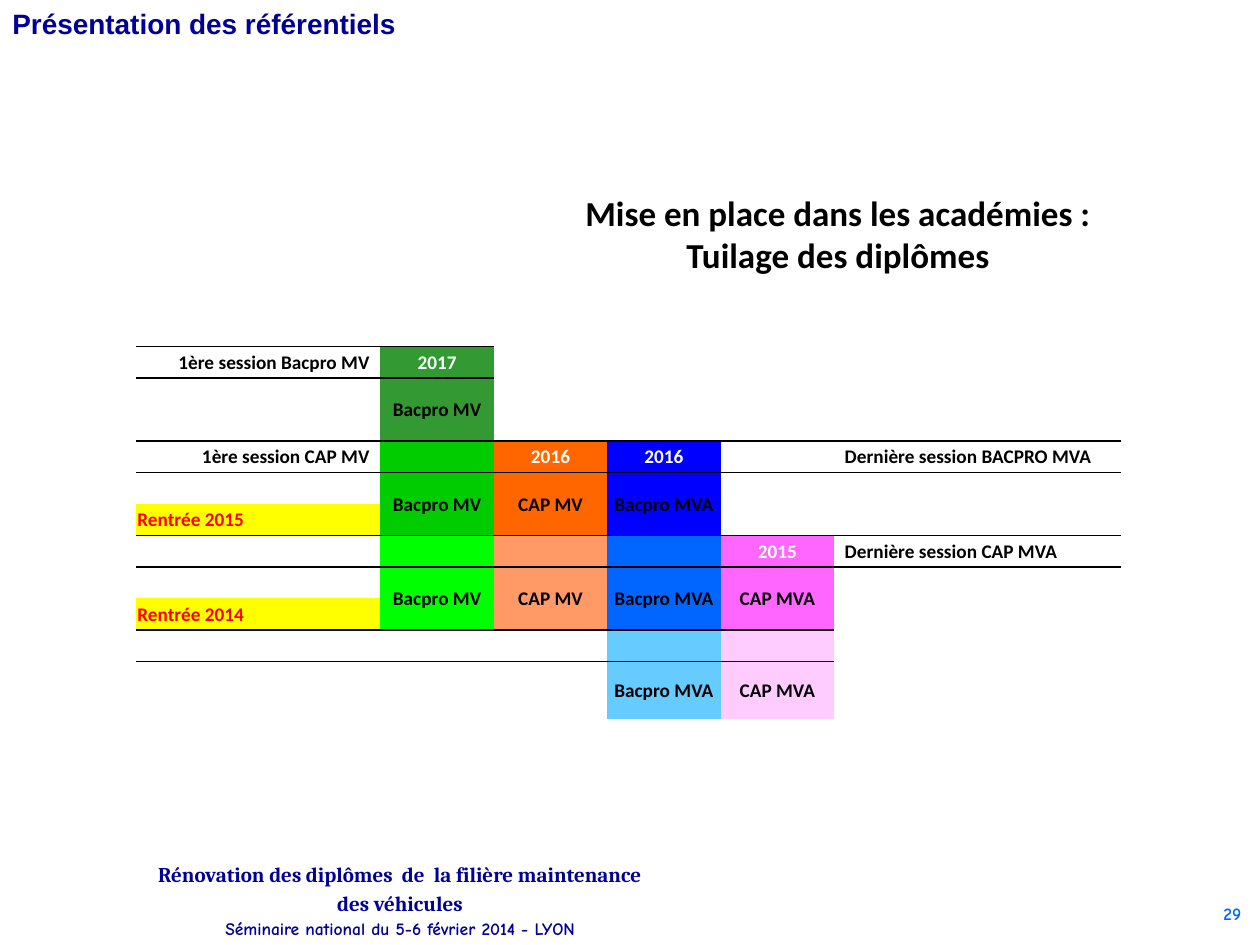
from collections import namedtuple
from dataclasses import dataclass

from lxml import etree
from pptx import Presentation
from pptx import util as u
from pptx.dml.color import RGBColor
from pptx.enum import text
from pptx.oxml import ns

Box = namedtuple("Box", "column row columns rows")
Stack = namedtuple("Stack", "column row diploma colour year")
ALIGN, ANCHOR = text.PP_ALIGN, text.MSO_ANCHOR
SLIDE_WIDTH, SLIDE_HEIGHT = u.Inches(10), u.Inches(7.5)
GRID_COLUMNS, GRID_ROWS = 100, 75
NO_STYLE = "{2D5ABB26-0587-4C30-8999-92F81FD0307C}"


@dataclass(frozen=True)
class Theme:
    """Hold the colours, fonts and type sizes of the slide."""
    navy: str = "000099"
    blue: str = "0066FF"
    black: str = "000000"
    white: str = "FFFFFF"
    red: str = "FF0000"
    yellow: str = "FFFF00"
    heading_font: str = "Arial"
    body_font: str = "Calibri"
    footer_font: str = "Cambria"
    note_font: str = "Comic Neue"
    heading: int = 16
    title: int = 20
    footer: int = 12
    note: int = 10
    cell: int = 11
    rule: int = 1


THEME = Theme()
COLUMN_WIDTHS = [19.4, 9, 9, 9, 9, 22.8]
ROW_HEIGHTS = [2.2] + [2.5] * 11 + [2.1] * 2
RULES = {1: 2, 4: 6, 7: 6, 10: 5}
STACKS = [
    Stack(1, 1, "Bacpro MV", "339933", "2017"),
    Stack(1, 4, "Bacpro MV", "00CC00", ""),
    Stack(1, 7, "Bacpro MV", "00FF00", ""),
    Stack(2, 4, "CAP MV", "FF6600", "2016"),
    Stack(2, 7, "CAP MV", "FF9966", ""),
    Stack(3, 4, "Bacpro MVA", "0000FF", "2016"),
    Stack(3, 7, "Bacpro MVA", "0066FF", ""),
    Stack(3, 10, "Bacpro MVA", "66CCFF", ""),
    Stack(4, 7, "CAP MVA", "FF66FF", "2015"),
    Stack(4, 10, "CAP MVA", "FFCCFF", ""),
]
FIRST_SESSIONS = {1: "1ère session Bacpro MV", 4: "1ère session CAP MV"}
LAST_SESSIONS = {4: "Dernière session BACPRO MVA", 7: "Dernière session CAP MVA"}
SCHOOL_YEARS = {6: "Rentrée 2015", 9: "Rentrée 2014"}


def across(columns):
    """Turn grid columns into a length."""
    return int(SLIDE_WIDTH * columns / GRID_COLUMNS)


def down(rows):
    """Turn grid rows into a length."""
    return int(SLIDE_HEIGHT * rows / GRID_ROWS)


def place(box):
    """Turn a grid box into left, top, width and height."""
    return across(box.column), down(box.row), across(box.columns), down(box.rows)


def write(paragraph, words, size, font, colour, align=ALIGN.LEFT, bold=True, spacing=None):
    """Write words into a paragraph with the given format."""
    paragraph.alignment = align
    if spacing:
        paragraph.line_spacing = spacing
    run = paragraph.add_run()
    run.text = words
    run.font.size, run.font.name, run.font.bold = u.Pt(size), font, bold
    run.font.color.rgb = RGBColor.from_string(colour)


def add_frame(slide, box, anchor=ANCHOR.TOP):
    """Add a wrapping text box and return its text frame."""
    frame = slide.shapes.add_textbox(*place(box)).text_frame
    frame.word_wrap = True
    frame.vertical_anchor = anchor
    return frame


def add_line(slide, box, words, **style):
    """Add a text box that holds one paragraph."""
    write(add_frame(slide, box).paragraphs[0], words, **style)


def add_footer(slide, box):
    """Add the two-paragraph seminar footer."""
    frame = add_frame(slide, box, ANCHOR.MIDDLE)
    shared = dict(colour=THEME.navy, align=ALIGN.CENTER, spacing=1.15)
    write(frame.paragraphs[0],
          "Rénovation des diplômes  de  la filière maintenance des véhicules",
          size=THEME.footer, font=THEME.footer_font, **shared)
    write(frame.add_paragraph(), "Séminaire national du 5-6 février 2014 - LYON",
          size=THEME.note, font=THEME.note_font, **shared)


def paint(cell, colour):
    """Fill a cell with a solid colour."""
    cell.fill.solid()
    cell.fill.fore_color.rgb = RGBColor.from_string(colour)


def write_cell(cell, words, colour=THEME.black, align=ALIGN.CENTER):
    """Write words into a table cell."""
    paragraph = cell.text_frame.paragraphs[0]
    write(paragraph, words, THEME.cell, THEME.body_font, colour, align)


def clear_cell(cell):
    """Give a cell tight margins, no fill and a small empty line."""
    cell.margin_left = cell.margin_right = cell.margin_top = u.Inches(0.01)
    cell.margin_bottom = 0
    cell.vertical_anchor = ANCHOR.MIDDLE
    cell.fill.background()
    paragraph = cell.text_frame.paragraphs[0]._p
    etree.SubElement(paragraph, ns.qn("a:endParaRPr"), sz=str(THEME.cell * 100))


def add_border(cell, side):
    """Draw a rule on one side of a cell."""
    line = etree.Element(ns.qn(f"a:ln{side}"), w=str(u.Pt(THEME.rule)))
    fill = etree.SubElement(line, ns.qn("a:solidFill"))
    etree.SubElement(fill, ns.qn("a:srgbClr"), val=THEME.black)
    cell._tc.get_or_add_tcPr().insert(0, line)


def add_rules(table):
    """Draw the horizontal rules between the session bands."""
    for row, count in RULES.items():
        for column in range(count):
            above = table.cell(row - 1, column)
            add_border(table.cell(row, column), "T")
            add_border(above, "B")
            if above.is_spanned:
                add_border(table.cell(row - 2, column), "B")


def add_stack(table, stack):
    """Colour one three-row block and write its year and diploma."""
    year, diploma, last = (table.cell(stack.row + step, stack.column) for step in range(3))
    diploma.merge(last)
    for cell in (year, diploma, last):
        paint(cell, stack.colour)
    if stack.year:
        write_cell(year, stack.year, THEME.white)
    write_cell(diploma, stack.diploma)


def add_schedule(slide, box):
    """Add the table of overlapping diplomas."""
    frame = slide.shapes.add_table(len(ROW_HEIGHTS), len(COLUMN_WIDTHS), *place(box))
    table = frame.table
    table.first_row = table.horz_banding = False
    table._tbl.tblPr.find(ns.qn("a:tableStyleId")).text = NO_STYLE
    for column, width in zip(table.columns, COLUMN_WIDTHS):
        column.width = across(width)
    for row, height in zip(table.rows, ROW_HEIGHTS):
        row.height = down(height)
    for cell in table.iter_cells():
        clear_cell(cell)
    for stack in STACKS:
        add_stack(table, stack)
    for row, words in FIRST_SESSIONS.items():
        cell = table.cell(row, 0)
        cell.margin_right = across(0.85)
        write_cell(cell, words, align=ALIGN.RIGHT)
    for row, words in LAST_SESSIONS.items():
        cell = table.cell(row, 5)
        cell.margin_left = across(0.85)
        write_cell(cell, words, align=ALIGN.LEFT)
    for row, words in SCHOOL_YEARS.items():
        cell = table.cell(row, 0)
        paint(cell, THEME.yellow)
        write_cell(cell, words, THEME.red, ALIGN.LEFT)
    add_rules(table)


def main():
    """Build the slide and save it."""
    presentation = Presentation()
    presentation.slide_width, presentation.slide_height = SLIDE_WIDTH, SLIDE_HEIGHT
    slide = presentation.slides.add_slide(presentation.slide_layouts[6])
    add_line(slide, Box(93.5, 71.2, 6, 3.2), "29", size=THEME.note,
             font=THEME.note_font, colour=THEME.blue, align=ALIGN.RIGHT)
    add_footer(slide, Box(11.4, 68.5, 40.7, 5.6))
    add_line(slide, Box(0, 0, 32.7, 3.7), "Présentation des référentiels",
             size=THEME.heading, font=THEME.heading_font, colour=THEME.navy)
    add_schedule(slide, Box(10.8, 25.3, sum(COLUMN_WIDTHS), sum(ROW_HEIGHTS)))
    add_line(slide, Box(42.9, 14.7, 47.2, 7.7),
             "Mise en place dans les académies : Tuilage des diplômes",
             size=THEME.title, font=THEME.body_font, colour=THEME.black, align=ALIGN.CENTER)
    presentation.save("out.pptx")


if __name__ == "__main__":
    main()
